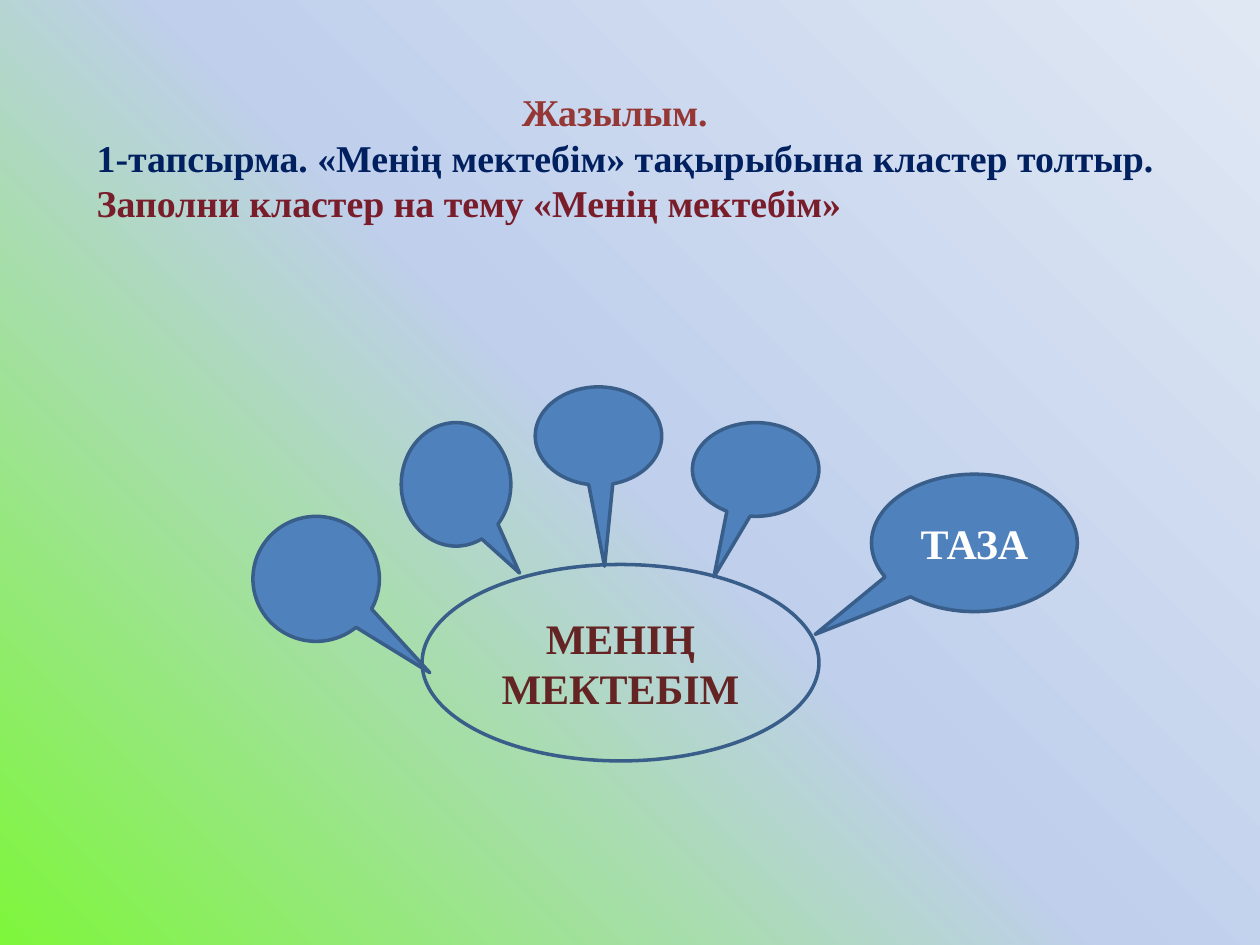
from copy import deepcopy

from pptx import Presentation
from pptx import util as u
from pptx.dml.color import RGBColor
from pptx.enum import shapes, text
from pptx.oxml.ns import qn

BLUE = RGBColor(0x4F, 0x81, 0xBD)
OUTLINE = RGBColor(0x39, 0x5E, 0x89)
WHITE = RGBColor(0xFF, 0xFF, 0xFF)
RUST = RGBColor(0x95, 0x37, 0x34)
NAVY = RGBColor(0x00, 0x20, 0x60)
WINE = RGBColor(0x79, 0x1D, 0x2A)
BROWN = RGBColor(0x63, 0x24, 0x23)

BACKGROUND = [
    (0, RGBColor(0x7E, 0xF6, 0x3C)),
    (0.5, RGBColor(0xBF, 0xCF, 0xEC)),
    (1, RGBColor(0xE0, 0xE8, 0xF4)),
]

# Heading lines: wording, colour, first-line indent in cm
HEADING = [
    ("Жазылым.", RUST, 8.57),
    ("1-тапсырма. «Менің мектебім» тақырыбына кластер толтыр.", NAVY, 0),
    ("Заполни кластер на тему «Менің мектебім»", WINE, 0),
]
HEADING_PLACE = (1.7, 1.12, 23.19, 4.09)

# Cluster: place in cm (left, top, width, height), then wording
TOPIC = ((8.51, 11.38, 8, 3.96), "МЕНІҢ МЕКТЕБІМ")
# Callouts also have the tip offset from the centre, as shares of the size
CALLOUTS = [
    ((17.57, 9.56, 4.15, 2.77), (-0.774, 0.666), "ТАЗА"),
    ((13.96, 8.52, 2.55, 1.89), (-0.33, 1.145), ""),
    ((8.09, 8.52, 2.21, 2.49), (0.579, 0.718), ""),
    ((5.1, 10.41, 2.55, 2.52), (0.898, 0.75), ""),
    ((10.79, 7.8, 2.55, 1.98), (0.049, 1.326), ""),
]


def write(para, wording, size, color):
    span = para.add_run()
    span.text = wording
    values = {"name": "Times New Roman", "size": u.Pt(size), "bold": True}
    for name, value in values.items():
        setattr(span.font, name, value)
    span.font.color.rgb = color


def add_bubble(page, kind, place, wording, color):
    bubble = page.shapes.add_shape(kind, *map(u.Cm, place))
    bubble.shadow.inherit = False
    bubble.line.color.rgb = OUTLINE
    bubble.line.width = u.Pt(2)
    if wording:
        frame = bubble.text_frame
        frame.word_wrap = True
        frame.vertical_anchor = text.MSO_ANCHOR.MIDDLE
        para = frame.paragraphs[0]
        para.alignment = text.PP_ALIGN.CENTER
        write(para, wording, 24, color)
    return bubble


deck = Presentation()
deck.slide_width, deck.slide_height = u.Cm(25.4), u.Cm(19.05)
page = deck.slides.add_slide(deck.slide_layouts[6])

# Background gradient, from bottom left to top right
fill = page.background.fill
fill.gradient()
fill.gradient_angle = 45
stop_list = next(page.element.iter(qn("a:gsLst")))
stop_list.append(deepcopy(stop_list[-1]))
for stop, (position, color) in zip(fill.gradient_stops, BACKGROUND):
    stop.position = position
    stop.color.rgb = color

# Heading
box = page.shapes.add_textbox(*map(u.Cm, HEADING_PLACE))
frame = box.text_frame
frame.word_wrap = True
frame.vertical_anchor = text.MSO_ANCHOR.MIDDLE
for index, (wording, color, indent) in enumerate(HEADING):
    para = frame.add_paragraph() if index else frame.paragraphs[0]
    if indent:
        para._p.get_or_add_pPr().set("indent", str(u.Cm(indent)))
    write(para, wording, 21.6, color)

# Topic in the middle of the cluster
topic = add_bubble(page, shapes.MSO_SHAPE.OVAL, *TOPIC, BROWN)
topic.fill.background()

# Callouts pointing at the topic
for place, tip, wording in CALLOUTS:
    callout = add_bubble(page, shapes.MSO_SHAPE.OVAL_CALLOUT, place, wording, WHITE)
    callout.fill.solid()
    callout.fill.fore_color.rgb = BLUE
    for index, offset in enumerate(tip):
        callout.adjustments[index] = offset

deck.save("out.pptx")
